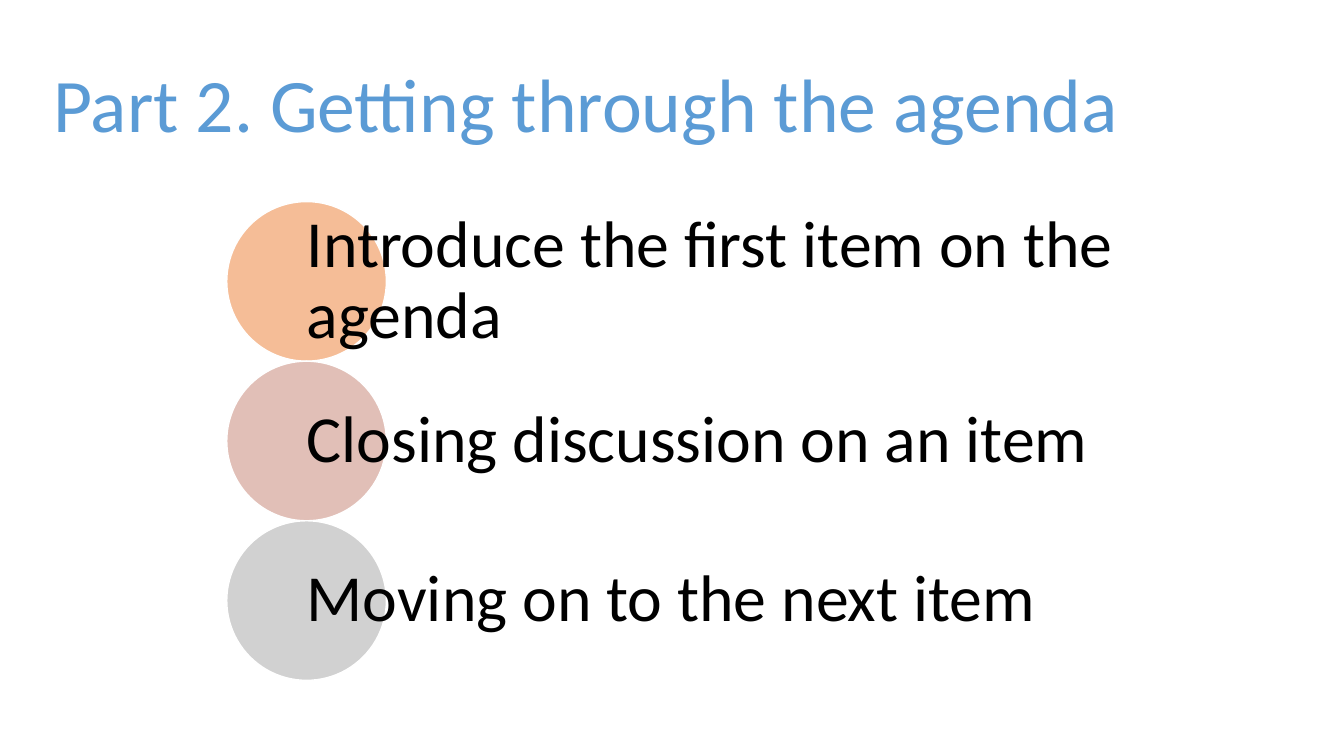
import dataclasses

import lxml.etree
import pptx
import pptx.dml.color
import pptx.enum.shapes
import pptx.enum.text
import pptx.oxml.ns
import pptx.util

Pt = pptx.util.Pt
RGB = pptx.dml.color.RGBColor.from_string
MIDDLE = pptx.enum.text.MSO_ANCHOR.MIDDLE


@dataclasses.dataclass(frozen=True)
class Theme:
    font: str = "Calibri"
    heading: str = "5B9BD5"
    text: str = "000000"
    outline: str = "FFFFFF"
    heading_size: int = 54
    step_size: int = 47


theme = Theme()


def write(frame, text, size, color):
    frame.text = text
    frame.word_wrap = True
    frame.auto_size = pptx.enum.text.MSO_AUTO_SIZE.NONE
    frame.vertical_anchor = MIDDLE
    paragraph = frame.paragraphs[0]
    paragraph.line_spacing = 0.9
    paragraph.font.name = theme.font
    paragraph.font.size = Pt(size)
    paragraph.font.color.rgb = RGB(color)


deck = pptx.Presentation()
deck.slide_width, deck.slide_height = Pt(960), Pt(540)
slide = deck.slides.add_slide(deck.slide_layouts[5])

heading = slide.shapes.title
heading.left, heading.top, heading.width, heading.height = Pt(31), Pt(25.2), Pt(898.5), Pt(104.4)
write(heading.text_frame, "Part 2. Getting through the agenda", theme.heading_size, theme.heading)
heading.text_frame.paragraphs[0].alignment = pptx.enum.text.PP_ALIGN.LEFT

steps = [
    ("Introduce the first item on the agenda", "ED7D31"),
    ("Closing discussion on an item", "C48170"),
    ("Moving on to the next item", "A5A5A5"),
]
diameter = 114
left, top = 162, 144
agenda = slide.shapes.add_group_shape()

for row, (step, color) in enumerate(steps):
    y = Pt(top + row * diameter)
    circle = agenda.shapes.add_shape(
        pptx.enum.shapes.MSO_SHAPE.OVAL, Pt(left), y, Pt(diameter), Pt(diameter))
    circle.shadow.inherit = False
    circle.fill.solid()
    circle.fill.fore_color.rgb = RGB(color)
    tint = circle.fill._xPr.find(".//" + pptx.oxml.ns.qn("a:srgbClr"))
    lxml.etree.SubElement(tint, pptx.oxml.ns.qn("a:alpha"), val="50000")
    circle.line.color.rgb = RGB(theme.outline)
    circle.line.width = Pt(1)

    label = agenda.shapes.add_textbox(Pt(left + diameter / 2), y, Pt(608.4), Pt(diameter))
    write(label.text_frame, step, theme.step_size, theme.text)
    label.text_frame.margin_left = label.text_frame.margin_right = 0
    label.text_frame.margin_top = label.text_frame.margin_bottom = Pt(5)

deck.save("out.pptx")
